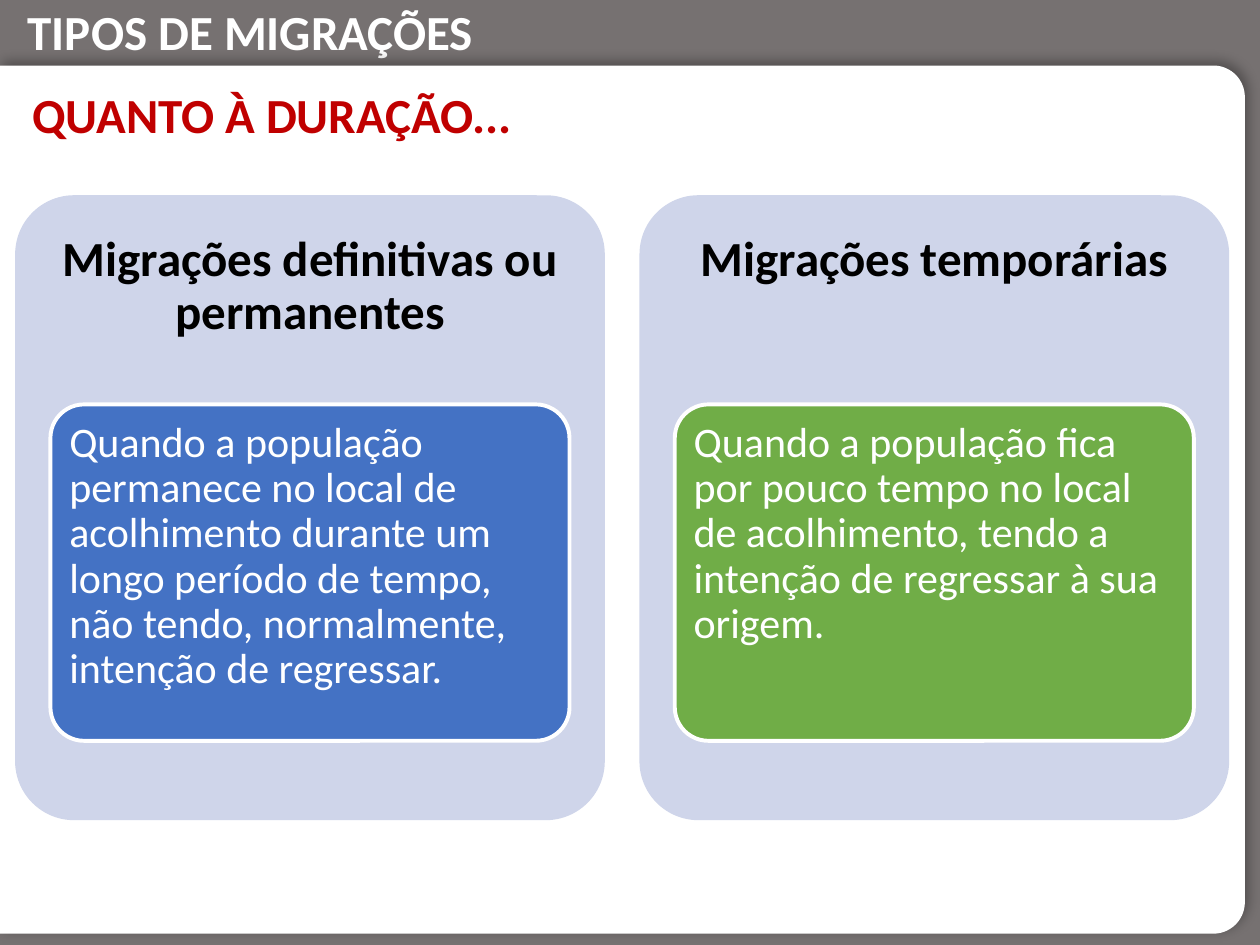
from math import cos, radians, sin

from lxml import etree
from pptx import Presentation
from pptx.dml.color import RGBColor
from pptx.enum.shapes import MSO_SHAPE
from pptx.enum.text import MSO_ANCHOR, PP_ALIGN
from pptx.oxml.ns import qn
from pptx.util import Inches, Pt

RECTANGLE, ROUNDED = MSO_SHAPE.RECTANGLE, MSO_SHAPE.ROUNDED_RECTANGLE
TOP, MIDDLE = MSO_ANCHOR.TOP, MSO_ANCHOR.MIDDLE
LEFT, CENTER = PP_ALIGN.LEFT, PP_ALIGN.CENTER

WIDTH, HEIGHT = 10, 7.5
MARGIN, HEADER = 0.12, 0.52
CARD_TOP, CARD_WIDTH, CARD_HEIGHT, CARD_PITCH = 1.55, 4.68, 4.96, 4.955
HEADING_SHARE, DETAIL_TOP, DETAIL_SIDE, DETAIL_HEIGHT = 0.3, 1.66, 0.28, 2.67
TEXT_PAD = 0.08

COLORS = {
    "frame": "767171",
    "white": "FFFFFF",
    "black": "000000",
    "accent": "C00000",
    "card": "CFD5EA",
    "blue": "4472C4",
    "green": "70AD47",
}

CARDS = [
    (
        "Migrações definitivas ou permanentes",
        "Quando a população permanece no local de acolhimento durante um longo "
        "período de tempo, não tendo, normalmente, intenção de regressar.",
        "blue",
    ),
    (
        "Migrações temporárias",
        "Quando a população fica por pouco tempo no local de acolhimento, "
        "tendo a intenção de regressar à sua origem.",
        "green",
    ),
]


def color(key):
    """Return the named palette colour."""
    return RGBColor.from_string(COLORS[key])


def inches(*lengths):
    """Convert lengths to slide units."""
    return [Inches(length) for length in lengths]


def write(shape, text, ink, size=28, bold=True, align=LEFT, anchor=TOP,
          insets=(0.1, 0.05, 0.1, 0.05), spacing=1.0):
    """Put one formatted paragraph into a shape."""
    frame = shape.text_frame
    sides = ("margin_left", "margin_top", "margin_right", "margin_bottom")
    layout = dict(zip(sides, inches(*insets)), word_wrap=True, vertical_anchor=anchor)
    for name, value in layout.items():
        setattr(frame, name, value)
    paragraph = frame.paragraphs[0]
    paragraph.alignment, paragraph.line_spacing = align, spacing
    run = paragraph.add_run()
    run.text = text
    for name, value in {"name": "Calibri", "size": Pt(size), "bold": bold}.items():
        setattr(run.font, name, value)
    run.font.color.rgb = color(ink)


def add_block(slide, kind, box, fill=None, outline=None, radius=None):
    """Add a flat preset shape with optional fill, outline and corner radius."""
    block = slide.shapes.add_shape(kind, *inches(*box))
    block.shadow.inherit = False
    if radius is not None:
        block.adjustments[0] = radius
    if fill:
        block.fill.solid()
        block.fill.fore_color.rgb = color(fill)
    else:
        block.fill.background()
    if outline:
        block.line.color.rgb = color(outline)
        block.line.width = Pt(2.25)
    else:
        block.line.fill.background()
    return block


def add_text(slide, box, text, ink, **style):
    """Add a text box with one paragraph."""
    write(slide.shapes.add_textbox(*inches(*box)), text, ink, **style)


def add_shadow(shape, blur, distance, direction, opacity):
    """Give a shape an outer black shadow."""
    shape.shadow.inherit = False
    effects = shape._element.spPr.find(qn("a:effectLst"))
    shadow = etree.SubElement(
        effects, qn("a:outerShdw"), blurRad=str(Pt(blur)), dist=str(Pt(distance)),
        dir=str(direction * 60000), algn="bl", rotWithShape="0")
    tint = etree.SubElement(shadow, qn("a:srgbClr"), val=COLORS["black"])
    etree.SubElement(tint, qn("a:alpha"), val=str(opacity * 1000))


def corner(x, y, radius, start):
    """Return the points of a quarter circle around a centre."""
    angles = [radians(start + step) for step in range(0, 91, 5)]
    return [(x + radius * cos(a), y + radius * sin(a)) for a in angles]


def add_panel(slide):
    """Draw the white page with rounded right corners."""
    right, bottom, radius = WIDTH - MARGIN, 7.41, 0.25
    outline = corner(right - radius, HEADER + radius, radius, -90)
    outline += corner(right - radius, bottom - radius, radius, 0)
    outline.append((0, bottom))
    builder = slide.shapes.build_freeform(0, Inches(HEADER))
    builder.add_line_segments([inches(*point) for point in outline], close=True)
    panel = builder.convert_to_shape()
    panel.fill.solid()
    panel.fill.fore_color.rgb = color("white")
    panel.line.fill.background()
    add_shadow(panel, blur=7, distance=3, direction=315, opacity=30)


def add_title(slide, text):
    """Place the title placeholder in the header band, above the frame."""
    title = slide.shapes.title
    title.left, title.top, title.width, title.height = inches(MARGIN, -0.04, 9.37, 0.57)
    write(title, text, "white")
    slide.shapes._spTree.append(title._element)


def add_card(slide, column, heading, detail, fill):
    """Add a migration type with its heading and explanation."""
    left = MARGIN + column * CARD_PITCH
    add_block(slide, ROUNDED, (left, CARD_TOP, CARD_WIDTH, CARD_HEIGHT), "card", radius=0.1)
    add_text(slide, (left, CARD_TOP, CARD_WIDTH, CARD_HEIGHT * HEADING_SHARE), heading,
             "black", align=CENTER, insets=(0.12, 0.31, 0.12, 0.12), spacing=0.9)
    x, y = left + DETAIL_SIDE, CARD_TOP + DETAIL_TOP
    width = CARD_WIDTH - 2 * DETAIL_SIDE
    add_block(slide, ROUNDED, (x, y, width, DETAIL_HEIGHT), fill, "white", 0.1)
    box = (x + TEXT_PAD, y + TEXT_PAD, width - 2 * TEXT_PAD, DETAIL_HEIGHT - 2 * TEXT_PAD)
    add_text(slide, box, detail, "white", size=24, bold=False,
             insets=(0.07, 0.05, 0.07, 0.05), spacing=0.9)


def main():
    """Build the slide and save it."""
    deck = Presentation()
    deck.slide_width, deck.slide_height = inches(WIDTH, HEIGHT)
    slide = deck.slides.add_slide(deck.slide_layouts[5])
    add_block(slide, RECTANGLE, (0, 0, WIDTH, HEIGHT), "frame")
    add_title(slide, "TIPOS DE MIGRAÇÕES")
    add_panel(slide)
    subtitle = add_block(slide, ROUNDED, (MARGIN, HEADER, 7.87, 0.77))
    write(subtitle, "QUANTO À DURAÇÃO...", "accent", anchor=MIDDLE)
    for column, card in enumerate(CARDS):
        add_card(slide, column, *card)
    deck.save("out.pptx")


if __name__ == "__main__":
    main()
